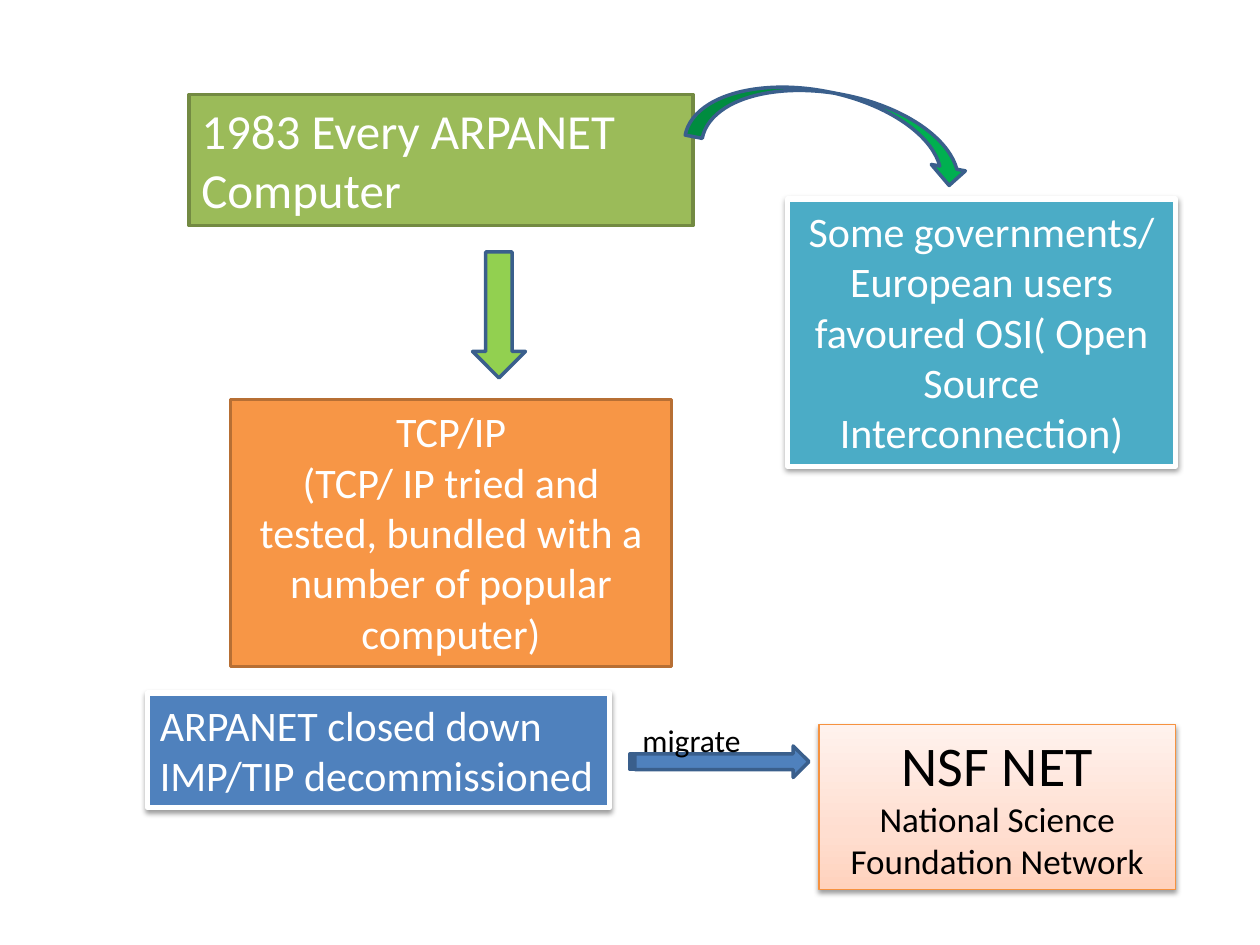
from copy import deepcopy
from dataclasses import dataclass
from typing import Optional

from lxml import etree
from pptx import Presentation
from pptx.dml.color import RGBColor
from pptx.enum.shapes import MSO_SHAPE
from pptx.enum.text import MSO_ANCHOR, MSO_AUTO_SIZE, PP_ALIGN
from pptx.oxml.ns import qn
from pptx.util import Inches, Pt

RECTANGLE = MSO_SHAPE.RECTANGLE
DOWN_ARROW = MSO_SHAPE.DOWN_ARROW
CURVED_ARROW = MSO_SHAPE.CURVED_LEFT_ARROW
STRIPED_ARROW = MSO_SHAPE.STRIPED_RIGHT_ARROW
LEFT, CENTER = PP_ALIGN.LEFT, PP_ALIGN.CENTER
TOP = MSO_ANCHOR.TOP
GROW = MSO_AUTO_SIZE.SHAPE_TO_FIT_TEXT

FONT = "Calibri"
WHITE, BLACK = "FFFFFF", "000000"
ARROW_LINE = "3A5F8C"
PEACH_STOPS = ((0, "FFD2BD"), (0.35, "FFDED0"), (1, "FFF2ED"))


@dataclass
class Line:
    text: str
    size: float


@dataclass
class Box:
    left: float
    top: float
    width: float
    height: float
    lines: list[Line]
    fill: Optional[str] = None
    border: Optional[str] = None
    border_width: float = 2
    align: PP_ALIGN = CENTER
    color: str = WHITE
    shadow: bool = False


@dataclass
class Arrow:
    kind: MSO_SHAPE
    left: float
    top: float
    width: float
    height: float
    fill: str
    rotation: float = 0


BOXES_AND_ARROWS = [
    Box(1.5, 0.75, 4, 1.04, [Line("1983 Every ARPANET Computer", 28)],
        "9BBB59", "738A42", align=LEFT),
    Arrow(DOWN_ARROW, 3.75, 2, 0.42, 1, "92D050"),
    Box(1.83, 3.17, 3.5, 2.12,
        [Line("TCP/IP", 24),
         Line("(TCP/ IP tried and tested, bundled with a number of popular computer)", 24)],
        "F79646", "B76F34"),
    Arrow(CURVED_ARROW, 6.33, -0.12, 0.55, 2.27, "00B050", 280.8),
    Box(6.25, 1.58, 3.08, 2.12,
        [Line("Some governments/ European users favoured OSI( Open Source Interconnection)", 24)],
        "4BACC6", WHITE, 3, shadow=True),
    Box(1.17, 5.5, 3.67, 0.91,
        [Line("ARPANET closed down", 24), Line("IMP/TIP decommissioned", 24)],
        "4F81BD", WHITE, 3, LEFT, shadow=True),
    Arrow(STRIPED_ARROW, 5, 5.92, 1.42, 0.25, "4F81BD"),
    Box(5, 5.67, 1.42, 0.42, [Line("migrate", 18)], align=LEFT, color=BLACK),
]
NSF_BOX = Box(6.5, 5.75, 2.83, 1.31,
              [Line("NSF NET", 32), Line("National Science Foundation Network", 20)],
              "FFDED0", "F69240", 0.75, color=BLACK, shadow=True)


def rgb(value: str) -> RGBColor:
    return RGBColor.from_string(value)


def add_shadow(shape) -> None:
    effects = shape._element.spPr.find(qn("a:effectLst"))
    outer = etree.SubElement(effects, qn("a:outerShdw"), blurRad=str(Pt(3.1)),
                             dist=str(Pt(1.6)), dir="5400000", rotWithShape="0")
    color = etree.SubElement(outer, qn("a:srgbClr"), val=BLACK)
    etree.SubElement(color, qn("a:alpha"), val="38000")


def fill_gradient(shape, stops: tuple, angle: float) -> None:
    shape.fill.gradient()
    shape.fill.gradient_angle = angle
    stop_list = shape._element.spPr.find(qn("a:gradFill")).find(qn("a:gsLst"))
    while len(stop_list) < len(stops):
        stop_list.append(deepcopy(stop_list[0]))
    for stop, (position, color) in zip(shape.fill.gradient_stops, stops):
        stop.position = position
        stop.color.rgb = rgb(color)


def add_outlined(slide, kind: MSO_SHAPE, item, border: str, width: float):
    shape = slide.shapes.add_shape(kind, Inches(item.left), Inches(item.top),
                                   Inches(item.width), Inches(item.height))
    shape.fill.solid()
    shape.fill.fore_color.rgb = rgb(item.fill)
    shape.line.color.rgb = rgb(border)
    shape.line.width = Pt(width)
    shape.shadow.inherit = False
    return shape


def add_arrow(slide, arrow: Arrow) -> None:
    shape = add_outlined(slide, arrow.kind, arrow, ARROW_LINE, 2)
    shape.rotation = arrow.rotation


def write_lines(shape, box: Box) -> None:
    frame = shape.text_frame
    frame.word_wrap = True
    frame.auto_size = GROW
    frame.vertical_anchor = TOP
    for index, line in enumerate(box.lines):
        paragraph = frame.add_paragraph() if index else frame.paragraphs[0]
        paragraph.text = line.text
        paragraph.alignment = box.align
        paragraph.font.name = FONT
        paragraph.font.size = Pt(line.size)
        paragraph.font.color.rgb = rgb(box.color)


def add_box(slide, box: Box):
    if box.fill:
        shape = add_outlined(slide, RECTANGLE, box, box.border, box.border_width)
    else:
        shape = slide.shapes.add_textbox(Inches(box.left), Inches(box.top),
                                         Inches(box.width), Inches(box.height))
    if box.shadow:
        add_shadow(shape)
    write_lines(shape, box)
    return shape


def main() -> None:
    deck = Presentation()
    deck.slide_width, deck.slide_height = Inches(10), Inches(7.5)
    slide = deck.slides.add_slide(deck.slide_layouts[6])
    for item in BOXES_AND_ARROWS:
        if isinstance(item, Arrow):
            add_arrow(slide, item)
        else:
            add_box(slide, item)
    fill_gradient(add_box(slide, NSF_BOX), PEACH_STOPS, 90)
    deck.save("out.pptx")


if __name__ == "__main__":
    main()
